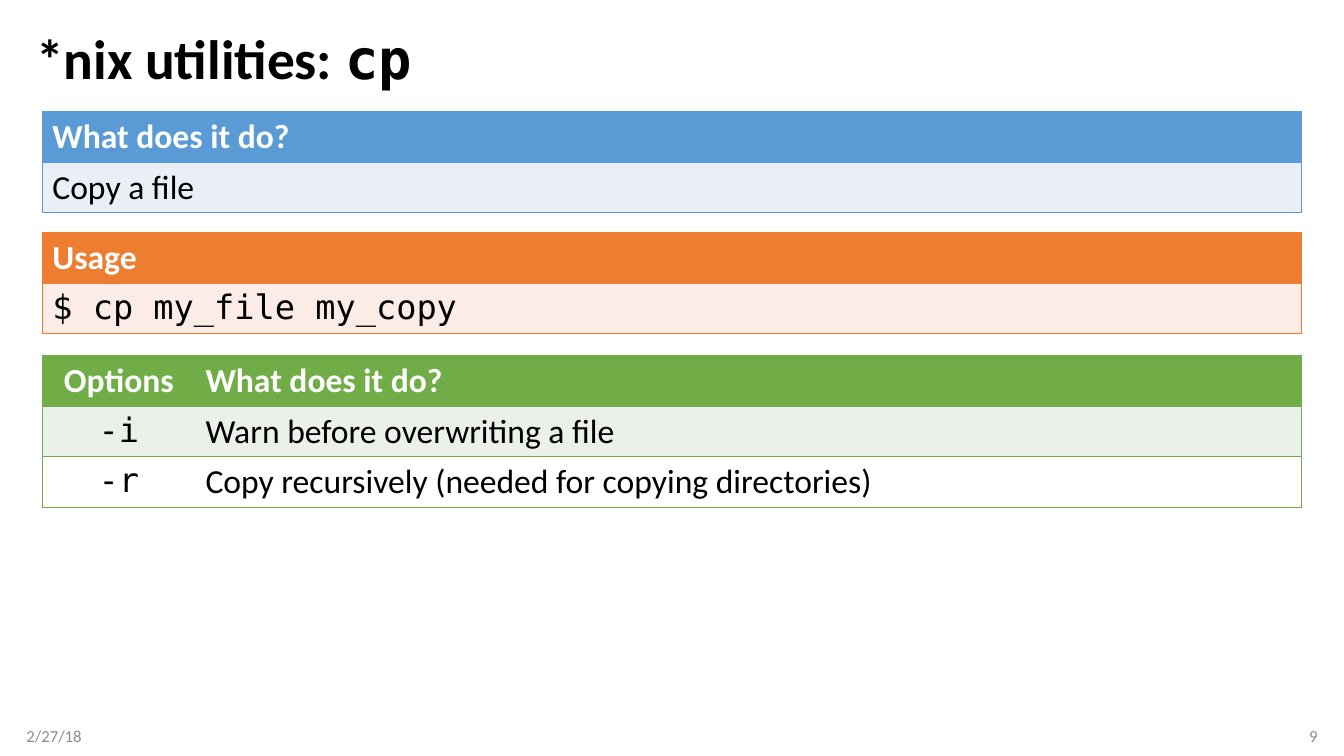
from lxml import etree
from pptx import Presentation
from pptx import util as u
from pptx.dml.color import RGBColor
from pptx.enum import text
from pptx.oxml import ns

COLORS = {
    "black": "000000", "white": "FFFFFF", "gray": "8C8C8C",
    "blue": "5B9BD5", "pale blue": "EAEFF7",
    "orange": "ED7D31", "pale orange": "FCECE8",
    "green": "70AD47", "pale green": "EBF1E9",
}
SANS, MONO = "Calibri", "DejaVu Sans Mono"
LEFT, CENTER, RIGHT = text.PP_ALIGN.LEFT, text.PP_ALIGN.CENTER, text.PP_ALIGN.RIGHT
COLUMNS, ROWS = 48, 30
TITLE_MARGIN, TABLE_MARGIN = 0.94, 1.51
TABLE_WIDTH = COLUMNS - 2 * TABLE_MARGIN
TABLE_ROW = 1.64
OPTION_WIDTH = 5.47


class UtilitySlide:
    def __init__(self, presentation):
        self.column = presentation.slide_width / COLUMNS
        self.row = presentation.slide_height / ROWS
        self.slide = presentation.slides.add_slide(presentation.slide_layouts[5])

    def box(self, left, top, width, height):
        """Turn grid columns and rows into slide lengths."""
        return (round(left * self.column), round(top * self.row),
                round(width * self.column), round(height * self.row))

    def style(self, font, size, color, name=SANS, bold=False):
        font.name, font.size, font.bold = name, u.Pt(size), bold
        font.color.rgb = RGBColor.from_string(COLORS[color])

    def title(self, words, command):
        shape = self.slide.shapes.title
        shape.left, shape.top, shape.width, shape.height = self.box(
            TITLE_MARGIN, 1, COLUMNS - 2 * TITLE_MARGIN, 2.88)
        frame = shape.text_frame
        frame.vertical_anchor = text.MSO_ANCHOR.MIDDLE
        frame.auto_size = text.MSO_AUTO_SIZE.NONE
        paragraph = frame.paragraphs[0]
        paragraph.alignment, paragraph.line_spacing = LEFT, 0.9
        for content, name in ((words, SANS), (command, MONO)):
            run = paragraph.add_run()
            run.text = content
            self.style(run.font, 39.6, "black", name, True)

    def footer(self, content, left, alignment):
        shape = self.slide.shapes.add_textbox(*self.box(left, 28.4, 10.8, 1.6))
        frame = shape.text_frame
        frame.word_wrap = True
        frame.vertical_anchor = text.MSO_ANCHOR.MIDDLE
        if alignment == LEFT:
            frame.margin_left = 0
        else:
            frame.margin_right = 0
        paragraph = frame.paragraphs[0]
        paragraph.text, paragraph.alignment = content, alignment
        self.style(paragraph.font, 12, "gray")

    def borders(self, cell, color, visible):
        properties = cell._tc.get_or_add_tcPr()
        for index, side in enumerate("LRTB"):
            line = etree.Element(ns.qn(f"a:ln{side}"), w=str(u.Pt(1)))
            if side in visible:
                fill = etree.SubElement(line, ns.qn("a:solidFill"))
                etree.SubElement(fill, ns.qn("a:srgbClr"), val=COLORS[color])
            else:
                etree.SubElement(line, ns.qn("a:noFill"))
            properties.insert(index, line)

    def table(self, top, color, widths, rows, code_column=None):
        """Draw a header row and banded rows; code_column is set in monospace."""
        frame = self.slide.shapes.add_table(
            len(rows), len(widths),
            *self.box(TABLE_MARGIN, top, TABLE_WIDTH, TABLE_ROW * len(rows)))
        table = frame.table
        table.first_row = table.horz_banding = False
        for column, width in zip(table.columns, widths):
            column.width = round(width * self.column)
        last = len(widths) - 1
        for i, contents in enumerate(rows):
            header = i == 0
            background = color if header else f"pale {color}" if i % 2 else "white"
            for j, content in enumerate(contents):
                cell = table.cell(i, j)
                cell.fill.solid()
                cell.fill.fore_color.rgb = RGBColor.from_string(COLORS[background])
                sides = "TB" + ("L" if j == 0 else "") + ("R" if j == last else "")
                self.borders(cell, color, sides)
                paragraph = cell.text_frame.paragraphs[0]
                paragraph.text = content
                paragraph.alignment = CENTER if j < last else LEFT
                code = j == code_column and not header
                self.style(paragraph.font, 24, "white" if header else "black",
                           MONO if code else SANS, header)


def main():
    presentation = Presentation()
    presentation.slide_width, presentation.slide_height = u.Inches(13.33), u.Inches(7.5)
    slide = UtilitySlide(presentation)
    slide.title("*nix utilities: ", "cp")
    slide.footer("2/27/18", TITLE_MARGIN, LEFT)
    slide.footer("9", COLUMNS - TITLE_MARGIN - 10.8, RIGHT)
    slide.table(4.44, "blue", [TABLE_WIDTH], [["What does it do?"], ["Copy a file"]])
    slide.table(14.12, "green", [OPTION_WIDTH, TABLE_WIDTH - OPTION_WIDTH], [
        ["Options", "What does it do?"],
        ["-i", "Warn before overwriting a file"],
        ["-r", "Copy recursively (needed for copying directories)"],
    ], code_column=0)
    slide.table(9.24, "orange", [TABLE_WIDTH],
                [["Usage"], ["$ cp my_file my_copy"]], code_column=0)
    presentation.save("out.pptx")


if __name__ == "__main__":
    main()
